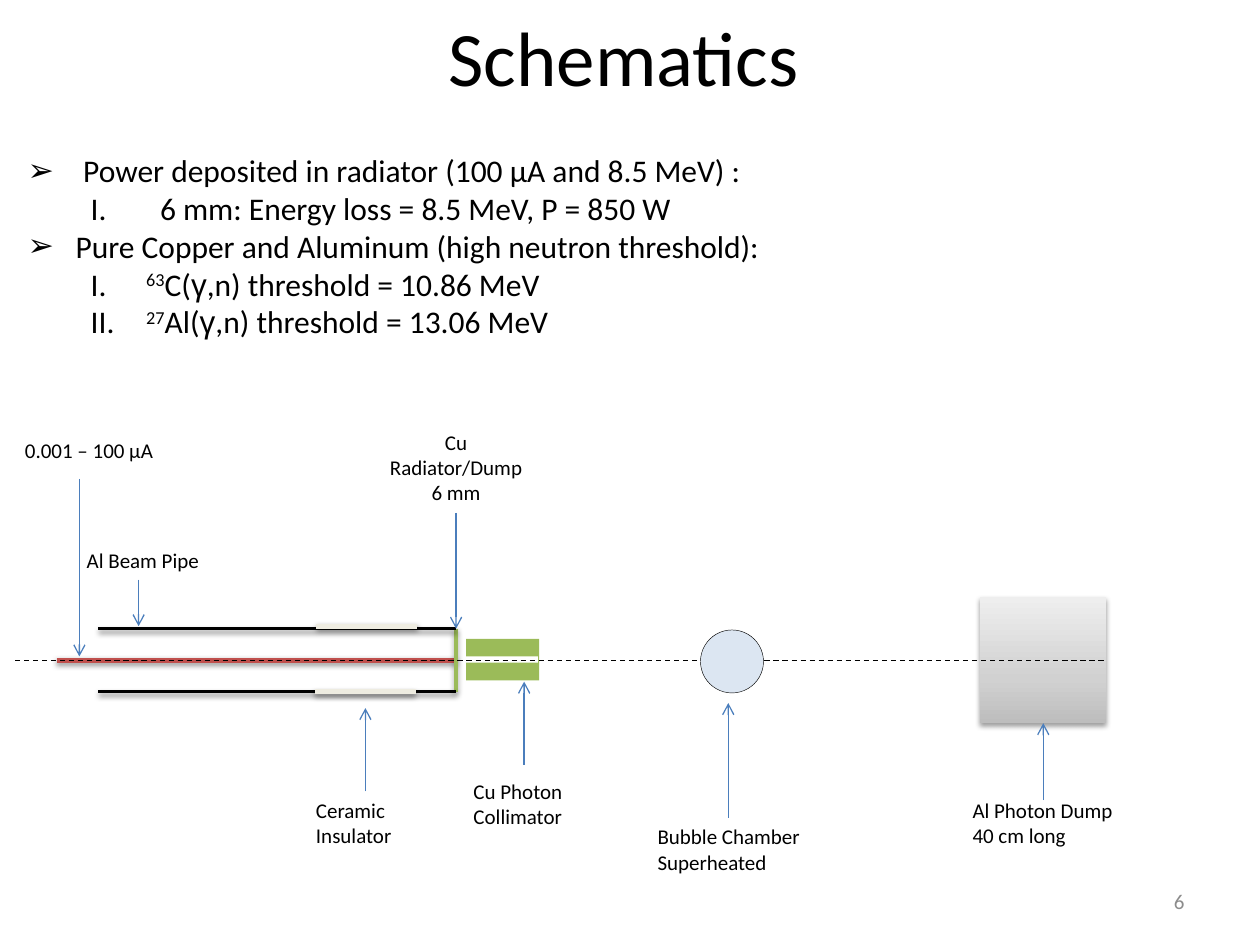
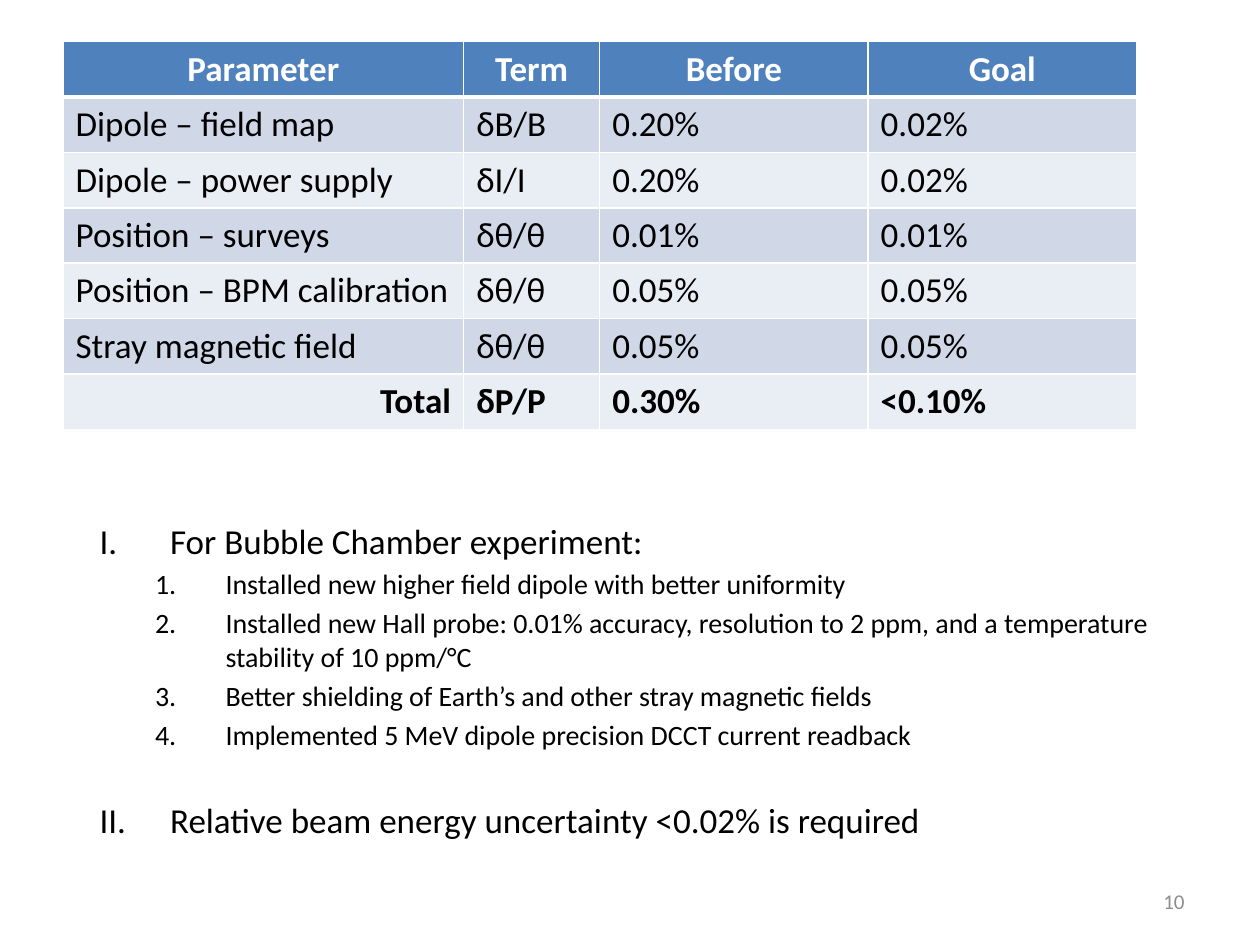
import pptx
import pptx.util
import pptx.dml.color
import pptx.enum.dml
import pptx.enum.shapes
import pptx.enum.text
import pptx.oxml
import pptx.oxml.ns
import lxml.etree

Inches, Pt = pptx.util.Inches, pptx.util.Pt
ALIGN = pptx.enum.text.PP_ALIGN
ANCHOR = pptx.enum.text.MSO_ANCHOR
SHAPE = pptx.enum.shapes.MSO_SHAPE
qn = pptx.oxml.ns.qn

FONT = "Calibri"
COLORS = {
    "text": "000000", "white": "FFFFFF", "number": "8C8C8C",
    "arrow": "4B7EBC", "beam": "C0504D", "copper": "9BBB59",
    "ceramic": "EEECE1", "bubble": "DCE6F2", "header": "4F81BD",
    "band_dark": "D0D8E8", "band_light": "E9EDF4",
    "dump_dark": "BDBDBD", "dump_mid": "D1D1D1", "dump_light": "EEEEEE",
}
GAMMA = ("γ", {"font": "Arial"})


def rgb(name):
    return pptx.dml.color.RGBColor.from_string(COLORS[name])


def add_run(p, text, size=12, color="text", font=FONT, bold=False, raised=False):
    r = p.add_run()
    r.text = text
    r.font.size = Pt(size)
    r.font.name = font
    r.font.bold = bold
    r.font.color.rgb = rgb(color)
    if raised:
        r._r.get_or_add_rPr().set("baseline", "30000")
    return r


def sub(parent, tag, **attrs):
    e = lxml.etree.SubElement(parent, qn(tag))
    for key, value in attrs.items():
        e.set(key, str(value))
    return e


class Deck:
    def __init__(self):
        self.prs = pptx.Presentation()
        self.prs.slide_width, self.prs.slide_height = Inches(10), Inches(7.5)
        self.s = None

    def slide(self, number, title=None):
        self.s = self.prs.slides.add_slide(self.prs.slide_layouts[1])
        sp = self.s.shapes.title
        if title:
            self.place(sp, 0.45, 0, 9, 0.89)
            p = sp.text_frame.paragraphs[0]
            p.alignment = ALIGN.CENTER
            add_run(p, title, size=44)
        else:
            sp._element.getparent().remove(sp._element)
        self.label(7.17, 6.95, 2.33, 0.4, [number], align=ALIGN.RIGHT,
                   anchor=ANCHOR.MIDDLE, color="number")

    def place(self, sp, x, y, w, h):
        sp.left, sp.top, sp.width, sp.height = map(Inches, (x, y, w, h))

    def label(self, x, y, w, h, lines, align=ALIGN.LEFT, anchor=ANCHOR.TOP, **fmt):
        sp = self.s.shapes.add_textbox(*map(Inches, (x, y, w, h)))
        tf = sp.text_frame
        tf.word_wrap = True
        tf.vertical_anchor = anchor
        for i, line in enumerate(lines):
            p = tf.paragraphs[0] if i == 0 else tf.add_paragraph()
            p.alignment = align
            add_run(p, line, **fmt)

    def outline(self, x, y, w, h, items):
        sp = self.s.placeholders[1]
        self.place(sp, x, y, w, h)
        tf = sp.text_frame
        tf.auto_size = pptx.enum.text.MSO_AUTO_SIZE.NONE
        for i, (runs, level, margin, hang, bullet, size, before) in enumerate(items):
            p = tf.paragraphs[0] if i == 0 else tf.add_paragraph()
            p.level = level
            p.space_before = Pt(before)
            pPr = p._p.get_or_add_pPr()
            pPr.set("marL", str(Inches(margin)))
            pPr.set("indent", str(Inches(-hang)))
            sub(pPr, "a:buFont", typeface="Arial" if bullet == "➢" else FONT)
            if bullet == "➢":
                sub(pPr, "a:buChar", char=bullet)
            else:
                sub(pPr, "a:buAutoNum", type=bullet)
            for text, fmt in runs:
                add_run(p, text, **{"size": size, **fmt})

    def effects(self, sp, shadow):
        spPr = sp._element.spPr
        lst = spPr.find(qn("a:effectLst"))
        if lst is None:
            lst = sub(spPr, "a:effectLst")
        if shadow:
            sh = sub(lst, "a:outerShdw", blurRad=Pt(3.1), dist=Pt(1.6),
                     dir=5400000, rotWithShape=0)
            clr = sub(sh, "a:srgbClr", val=COLORS["text"])
            sub(clr, "a:alpha", val=38000)

    def line(self, x1, y1, x2, y2, color, width, shadow=False, dash=False, arrow=False):
        sp = self.s.shapes.add_connector(
            pptx.enum.shapes.MSO_CONNECTOR.STRAIGHT, *map(Inches, (x1, y1, x2, y2)))
        sp.line.color.rgb = rgb(color)
        sp.line.width = Pt(width)
        if dash:
            sp.line.dash_style = pptx.enum.dml.MSO_LINE.DASH
        if arrow:
            sub(sp.line._get_or_add_ln(), "a:tailEnd", type="arrow")
        self.effects(sp, shadow)

    def arrow(self, x, y1, y2):
        self.line(x, y1, x, y2, "arrow", 0.75, arrow=True)

    def shape(self, kind, x, y, w, h, fill, border=None, shadow=False):
        sp = self.s.shapes.add_shape(kind, *map(Inches, (x, y, w, h)))
        sp.shadow.inherit = False
        if isinstance(fill, str):
            sp.fill.solid()
            sp.fill.fore_color.rgb = rgb(fill)
        else:
            grad = lxml.etree.Element(qn("a:gradFill"), rotWithShape="1")
            stops = sub(grad, "a:gsLst")
            for pos, name in fill:
                sub(sub(stops, "a:gs", pos=pos * 1000), "a:srgbClr", val=COLORS[name])
            sub(grad, "a:lin", ang=16200000, scaled=0)
            sp._element.spPr.find(qn("a:prstGeom")).addnext(grad)
        if border:
            sp.line.color.rgb = rgb(border)
            sp.line.width = Pt(0.25)
        else:
            sp.line.fill.background()
        self.effects(sp, shadow)

    def cell(self, cell, text, fill, top, bottom, align, **fmt):
        tcPr = cell._tc.get_or_add_tcPr()
        for side, width in zip("LRTB", (1, 1, top, bottom)):
            ln = sub(tcPr, "a:ln" + side, w=Pt(width))
            sub(sub(ln, "a:solidFill"), "a:srgbClr", val=COLORS["white"])
        cell.fill.solid()
        cell.fill.fore_color.rgb = rgb(fill)
        p = cell.text_frame.paragraphs[0]
        p.alignment = align
        add_run(p, text, size=20, **fmt)

    def table(self, x, y, widths, row_h, rows):
        frame = self.s.shapes.add_table(
            len(rows), len(widths), Inches(x), Inches(y),
            Inches(sum(widths)), Inches(row_h * len(rows)))
        tbl = frame.table
        for col, w in zip(tbl.columns, widths):
            col.width = Inches(w)
        last = len(rows) - 1
        for i, row in enumerate(rows):
            tbl.rows[i].height = Inches(row_h)
            fill = "header" if i == 0 else "band_dark" if i % 2 else "band_light"
            for j, text in enumerate(row):
                align = ALIGN.LEFT
                if i == 0:
                    align = ALIGN.CENTER
                elif i == last and j == 0:
                    align = ALIGN.RIGHT
                self.cell(tbl.cell(i, j), text, fill, 3 if i == 1 else 1,
                          3 if i == 0 else 1, align, bold=i in (0, last),
                          color="text" if i else "white")


def schematics(d):
    d.slide("6", "Schematics")

    def threshold(mass, element, energy):
        return [(mass, {"raised": True}), (element + "(", {}), GAMMA,
                (f",n) threshold = {energy} MeV", {})]

    roman = "romanUcPeriod"
    d.outline(0.12, 1.15, 6.88, 1.62, [
        ([("Power deposited in radiator (100 µA and 8.5 MeV) :", {})],
         0, 0.44, 0.44, "➢", 18, 0),
        ([("6 mm: Energy loss = 8.5 MeV, P = 850 W", {})],
         1, 1.05, 0.55, roman, 18, 0),
        ([("Pure Copper and Aluminum (high neutron threshold):", {})],
         0, 0.38, 0.38, "➢", 18, 0),
        (threshold("63", "C", "10.86"), 1, 0.94, 0.44, roman, 18, 0),
        (threshold("27", "Al", "13.06"), 1, 0.94, 0.44, roman, 18, 0),
    ])

    axis, pipe_top, pipe_bottom, radiator = 5.24, 4.99, 5.49, 3.62
    d.line(0.45, axis, radiator, axis, "beam", 3, shadow=True)
    d.shape(SHAPE.RECTANGLE, 7.78, 4.74, 1, 1,
            [(0, "dump_dark"), (35, "dump_mid"), (100, "dump_light")], shadow=True)
    d.line(radiator, pipe_top, radiator, pipe_bottom, "copper", 2, shadow=True)
    d.shape(SHAPE.RECTANGLE, 3.7, 5.07, 0.58, 0.33, "copper")
    d.shape(SHAPE.RECTANGLE, 3.69, 5.21, 0.58, 0.05, "white")
    d.line(0.12, axis, 8.78, axis, "text", 0.75, dash=True)
    for y in (pipe_top, pipe_bottom):
        d.line(0.78, y, radiator, y, "text", 2, shadow=True)
    d.shape(SHAPE.OVAL, 5.56, 5, 0.5, 0.5, "bubble", border="text")
    for x, y in ((2.5, pipe_bottom), (2.51, 4.97)):
        d.line(x, y, x + 0.8, y, "ceramic", 3, shadow=True)

    for x, start, end in ((0.63, 3.8, 5.21), (1.1, 4.6, 4.97), (radiator, 4.07, 4.99),
                          (2.9, 6.28, 5.62), (4.16, 6.07, 5.41),
                          (5.78, 6.49, 5.58), (8.28, 6.35, 5.74)):
        d.arrow(x, start, end)

    d.label(2.89, 3.36, 1.46, 0.71, ["Cu", "Radiator/Dump", "6 mm"], align=ALIGN.CENTER)
    for x, y, w, lines in (
            (0.1, 3.42, 1.34, ["0.001 – 100 µA"]),
            (0.59, 4.3, 1.2, ["Al Beam Pipe"]),
            (2.41, 6.28, 1, ["Ceramic", "Insulator"]),
            (3.66, 6.13, 1, ["Cu Photon", "Collimator"]),
            (5.12, 6.49, 1.45, ["Bubble Chamber", "Superheated"]),
            (7.62, 6.28, 1.45, ["Al Photon Dump", "40 cm long"])):
        d.label(x, y, w, 0.1 + 0.2 * len(lines), lines)


def energy_uncertainty(d):
    d.slide("10")
    d.table(0.5, 0.33, [3.18, 1.08, 2.13, 2.13], 0.44, [
        ["Parameter", "Term", "Before", "Goal"],
        ["Dipole – field map", "δB/B", "0.20%", "0.02%"],
        ["Dipole – power supply", "δI/I", "0.20%", "0.02%"],
        ["Position – surveys", "δθ/θ", "0.01%", "0.01%"],
        ["Position – BPM calibration", "δθ/θ", "0.05%", "0.05%"],
        ["Stray magnetic field", "δθ/θ", "0.05%", "0.05%"],
        ["Total", "δP/P", "0.30%", "<0.10%"],
    ])

    def main_point(text, before):
        return [(text, {})], 1, 1, 0.56, "romanUcPeriod", 20, before

    steps = [
        "Installed new higher field dipole with better uniformity",
        "Installed new Hall probe: 0.01% accuracy, resolution to 2 ppm, "
        "and a temperature stability of 10 ppm/°C",
        "Better shielding of Earth’s and other stray magnetic fields",
        "Implemented 5 MeV dipole precision DCCT current readback",
    ]
    d.outline(0.25, 4.07, 9.59, 3.08, [
        main_point("For Bubble Chamber experiment:", 0),
        *(([(t, {})], 2, 1.44, 0.56, "arabicPeriod", 16, 3.2) for t in steps),
        main_point("Relative beam energy uncertainty <0.02% is required", 27),
    ])


def main():
    d = Deck()
    schematics(d)
    energy_uncertainty(d)
    d.prs.save("out.pptx")


if __name__ == "__main__":
    main()
